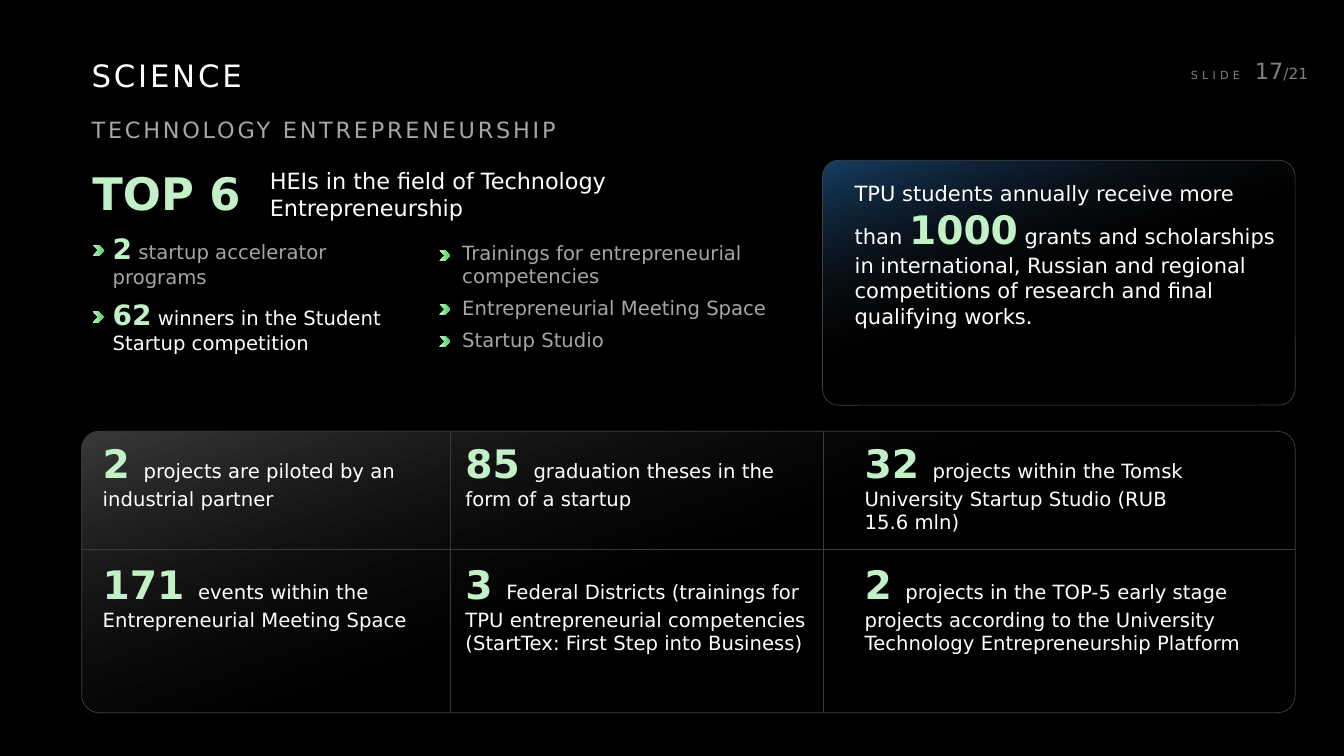
from lxml import etree
from pptx import Presentation
from pptx.dml.color import RGBColor
from pptx.enum.shapes import MSO_CONNECTOR, MSO_SHAPE
from pptx.enum.text import MSO_ANCHOR, PP_ALIGN
from pptx.oxml.ns import qn
from pptx.util import Cm, Pt

ROUNDED = MSO_SHAPE.ROUNDED_RECTANGLE
CHEVRON = MSO_SHAPE.CHEVRON
STRAIGHT = MSO_CONNECTOR.STRAIGHT
TOP, MIDDLE = MSO_ANCHOR.TOP, MSO_ANCHOR.MIDDLE
LEFT, RIGHT = PP_ALIGN.LEFT, PP_ALIGN.RIGHT

FONT = "DejaVu Sans"
BLACK, WHITE, GREY, DIM = "000000", "FFFFFF", "A6A6A6", "808080"
MINT, GREEN = "C2F1C8", "47D45A"
BORDER, DIVIDER = "404040", "3A3A3A"


def color(value):
    return RGBColor.from_string(value)


class SlideBuilder:
    """Draws styled elements on one slide."""

    def __init__(self, presentation):
        self.slide = presentation.slides.add_slide(presentation.slide_layouts[6])
        background = self.slide.background.fill
        background.solid()
        background.fore_color.rgb = color(BLACK)

    def gradient(self, shape, stops, angle):
        shape.fill.gradient()
        shape.fill.gradient_angle = angle
        for stop, (position, value) in zip(shape.fill.gradient_stops, stops):
            stop.position = position
            stop.color.rgb = color(value)

    def panel(self, left, top, width, height, corner, glow):
        shape = self.slide.shapes.add_shape(
            ROUNDED, Cm(left), Cm(top), Cm(width), Cm(height))
        shape.adjustments[0] = corner
        shape.shadow.inherit = False
        self.gradient(shape, [(0, glow), (0.51, "111111")], 290)
        # The second stop fades out completely
        faded = shape._element.spPr.findall(".//" + qn("a:srgbClr"))[1]
        etree.SubElement(faded, qn("a:alpha"), val="0")
        shape.line.color.rgb = color(BORDER)
        shape.line.width = Pt(0.5)

    def chevron(self, left, top):
        shape = self.slide.shapes.add_shape(
            CHEVRON, Cm(left), Cm(top), Cm(0.28), Cm(0.28))
        shape.shadow.inherit = False
        self.gradient(shape, [(0, MINT), (1, GREEN)], 0)
        shape.line.fill.background()

    def divider(self, left, top, right, bottom):
        line = self.slide.shapes.add_connector(
            STRAIGHT, Cm(left), Cm(top), Cm(right), Cm(bottom))
        line.line.color.rgb = color(DIVIDER)
        line.line.width = Pt(0.5)
        etree.SubElement(line._element.spPr, qn("a:effectLst"))

    def text(self, left, top, width, height, paragraphs, inset=0.13,
             align=LEFT, anchor=TOP):
        """Each paragraph is a list of runs: text, size, colour, bold, spacing."""
        box = self.slide.shapes.add_textbox(
            Cm(left), Cm(top), Cm(width), Cm(height))
        frame = box.text_frame
        frame.word_wrap = True
        frame.vertical_anchor = anchor
        frame.margin_top = frame.margin_bottom = Cm(inset)
        for index, runs in enumerate(paragraphs):
            paragraph = frame.add_paragraph() if index else frame.paragraphs[0]
            paragraph.alignment = align
            paragraph.space_after = Pt(6 if index < len(paragraphs) - 1 else 0)
            for content, size, value, bold, spacing in runs:
                run = paragraph.add_run()
                run.text = content
                run.font.name = FONT
                run.font.size = Pt(size)
                run.font.bold = bold
                run.font.color.rgb = color(value)
                if spacing:
                    run._r.get_or_add_rPr().set("spc", str(int(spacing * 100)))


def plain(content, size, value=WHITE, spacing=0):
    return content, size, value, False, spacing


def accent(content, size):
    return content, size, MINT, True, 0


def main():
    presentation = Presentation()
    presentation.slide_width = Cm(33.87)
    presentation.slide_height = Cm(19.05)
    builder = SlideBuilder(presentation)

    # Panels
    grid_left, grid_top, grid_right, grid_bottom = 2.06, 10.87, 32.64, 17.96
    builder.panel(20.73, 4.04, 11.91, 6.17, 0.066, "163E64")
    builder.panel(grid_left, grid_top, grid_right - grid_left,
                  grid_bottom - grid_top, 0.062, "3A3A3A")

    # Headings and slide number
    builder.text(2.06, 1.3, 17.6, 1.19, [[plain("SCIENCE", 22, WHITE, 2)]])
    builder.text(2.06, 2.79, 16.74, 0.94,
                 [[plain("TECHNOLOGY ENTREPRENEURSHIP", 16, GREY, 2)]])
    builder.text(29.08, 1.4, 4.14, 0.74,
                 [[plain("SLIDE", 8, DIM, 3), plain(" ", 12, DIM, 3.8),
                   plain("17", 16, DIM), plain("/21", 11, DIM)]],
                 align=RIGHT, anchor=MIDDLE)

    # Ranking
    builder.text(2.08, 4.04, 4.5, 1.63, [[accent("TOP 6", 32)]])
    builder.text(6.55, 4.09, 13.59, 1.63, [[plain(
        "HEIs in the field of Technology Entrepreneurship", 16)]])

    # Bulleted lists
    builder.text(2.59, 5.59, 7.92, 4.19, [
        [accent("2", 20), plain(" startup accelerator programs", 14, GREY)],
        [accent("62", 20),
         plain(" winners in the Student Startup competition", 14)],
    ], inset=0.25)
    builder.text(11.4, 5.82, 9.27, 4.19, [
        [plain(item, 14, GREY)] for item in (
            "Trainings for entrepreneurial competencies",
            "Entrepreneurial Meeting Space",
            "Startup Studio")
    ], inset=0.25)
    for left, tops in ((2.34, (6.17, 7.85)), (11.07, (6.3, 7.65, 8.46))):
        for top in tops:
            builder.chevron(left, top)

    # Grants card
    builder.text(21.29, 4.42, 11.1, 5.87, [[
        plain("TPU students annually receive more than ", 15),
        accent("1000", 28),
        plain(" grants and scholarships in international, Russian and regional "
              "competitions of research and final qualifying works.", 15)]])

    # Grid of figures: (number, label, box width) by row
    column_lefts = (2.34, 11.48, 21.54)
    rows = (
        (10.95, (
            ("2", "projects are piloted by an industrial partner", 8.74),
            ("85", "graduation theses in the form of a startup", 8.79),
            ("32", "projects within the Tomsk University Startup Studio "
                   "(RUB 15.6 mln)", 8.97))),
        (14.0, (
            ("171", "events within the Entrepreneurial Meeting Space", 9.02),
            ("3", "Federal Districts (trainings for TPU entrepreneurial "
                  "competencies (StartTex: First Step into Business)", 9.14),
            ("2", "projects in the TOP-5 early stage projects according to the "
                  "University Technology Entrepreneurship Platform", 10.26))),
    )
    for top, figures in rows:
        for left, (number, label, width) in zip(column_lefts, figures):
            builder.text(left, top, width, 2.64,
                         [[accent(number + " ", 28), plain(label, 14)]])

    # Grid lines
    builder.divider(grid_left, 13.84, grid_right, 13.84)
    for x in (11.35, 20.75):
        builder.divider(x, grid_top, x, grid_bottom)

    presentation.save("out.pptx")


if __name__ == "__main__":
    main()
